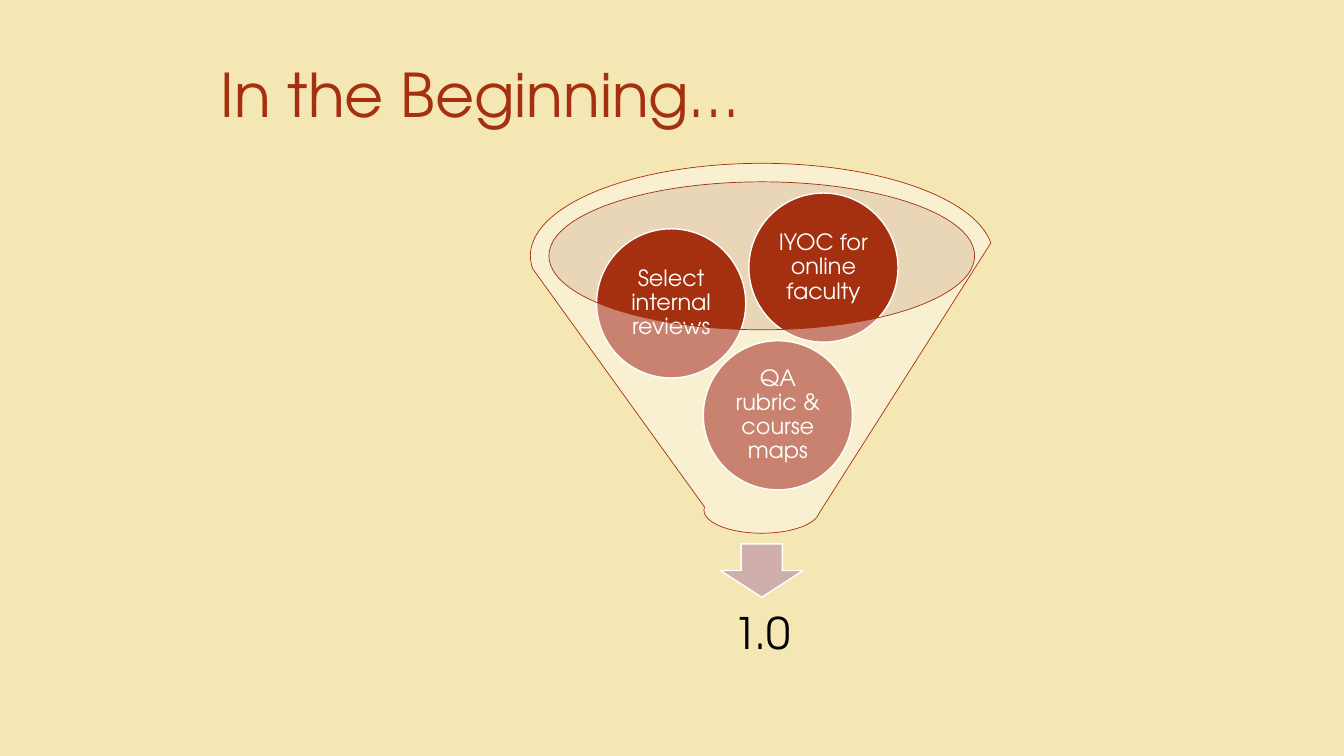
from pptx import Presentation
from pptx.dml.color import RGBColor
from pptx.enum.shapes import MSO_SHAPE as Preset
from pptx.enum.text import MSO_ANCHOR as Anchor, PP_ALIGN as Align
from pptx.oxml import parse_xml
from pptx.oxml.ns import nsdecls
from pptx.util import Inches, Pt

WIDTH, HEIGHT = Inches(13.33), Inches(7.5)
AXIS = 56.68
FONT = "TeX Gyre Adventor"
RUST, WHITE, CREAM = "A5300F", "FFFFFF", "F5E7B4"
CIRCLES = [
    ("QA rubric & course maps", 57.88, 54.93),
    ("Select internal reviews", 49.94, 40.13),
    ("IYOC for online faculty", 61.27, 35.4),
]


def paint(target, color):
    """Give a fill one solid colour from a hex string."""
    target.solid()
    target.fore_color.rgb = RGBColor.from_string(color)


def centred(middle_x, middle_y, width, height):
    """Turn a centre and a size in percent of the slide into a frame."""
    return (
        round(WIDTH * (middle_x - width / 2) / 100),
        round(HEIGHT * (middle_y - height / 2) / 100),
        round(WIDTH * width / 100),
        round(HEIGHT * height / 100),
    )


def write(box, words, size, color, align=Align.CENTER, spacing=0.9, inset=0.02):
    """Write one vertically centred paragraph into a box."""
    frame = box.text_frame
    frame.word_wrap = True
    frame.vertical_anchor = Anchor.MIDDLE
    frame.margin_left = frame.margin_right = Inches(inset)
    frame.margin_top = frame.margin_bottom = Inches(inset)
    para = frame.paragraphs[0]
    para.text = words
    para.alignment = align
    para.line_spacing = spacing
    para.font.name = FONT
    para.font.size = Pt(size)
    para.font.color.rgb = RGBColor.from_string(color)


def add_figure(page, preset, frame, fill, line=None, weight=1, opacity=100):
    """Add a flat preset shape with an optional outline and transparency."""
    shape = page.shapes.add_shape(preset, *frame)
    shape.shadow.inherit = False
    paint(shape.fill, fill)
    if opacity < 100:
        color = shape.fill._xPr.solidFill[0]
        color.append(parse_xml(f'<a:alpha {nsdecls("a")} val="{opacity * 1000}"/>'))
    if line:
        paint(shape.line.fill, line)
        shape.line.width = Pt(weight)
    else:
        shape.line.fill.background()
    return shape


def add_title(page, words):
    """Place and format the slide title."""
    title = page.shapes.title
    title.left, title.top, title.width, title.height = centred(56.68, 12.33, 82, 16.67)
    write(title, words, 43, RUST, Align.LEFT, 1.0, 0.1)


def add_funnel(page):
    """Draw the funnel with its circles, arrow and outcome."""
    add_figure(page, Preset.OVAL, centred(AXIS, 33.8, 31.73, 19.6), "D8BEBD", opacity=40)
    add_figure(page, Preset.DOWN_ARROW, centred(AXIS, 75.47, 6.15, 7.07), "CFAEAB", WHITE)
    outcome = page.shapes.add_textbox(*centred(AXIS, 84.07, 29.56, 13.07))
    write(outcome, "1.0", 31, "000000", inset=0.24)
    for words, middle_x, middle_y in CIRCLES:
        frame = centred(middle_x, middle_y, 11.1, 19.73)
        write(add_figure(page, Preset.OVAL, frame, RUST, WHITE), words, 16, WHITE)
    add_figure(page, Preset.FUNNEL, centred(AXIS, 46.07, 34.43, 48.93), WHITE, RUST, 0.5, 40)


def main():
    """Build and save the slide."""
    deck = Presentation()
    deck.slide_width, deck.slide_height = WIDTH, HEIGHT
    page = deck.slides.add_slide(deck.slide_layouts[5])
    paint(page.background.fill, CREAM)
    add_title(page, "In the Beginning…")
    add_funnel(page)
    deck.save("out.pptx")


if __name__ == "__main__":
    main()
